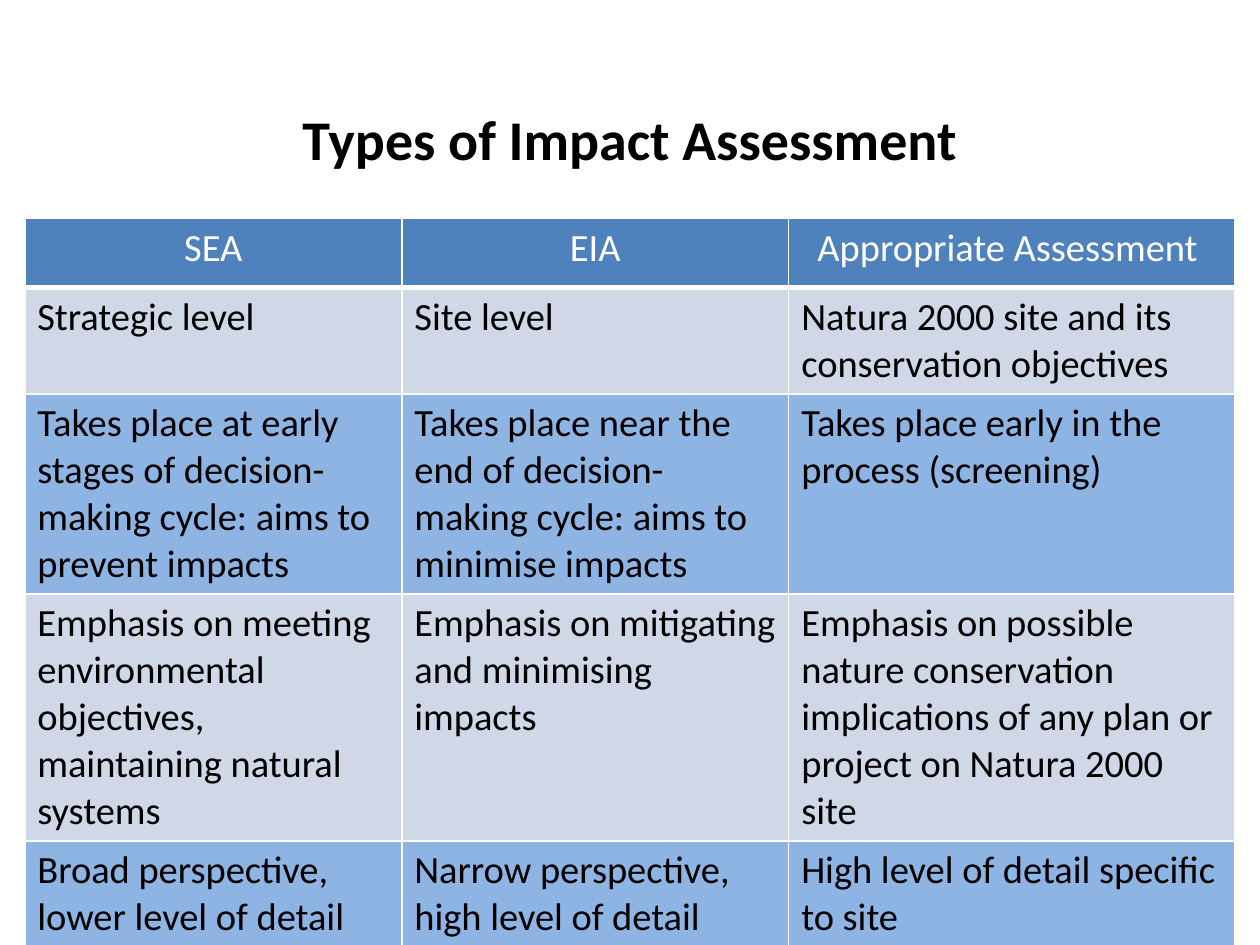
from lxml.etree import SubElement
from pptx import Presentation
from pptx.dml.color import RGBColor
from pptx.enum.text import MSO_ANCHOR, PP_ALIGN
from pptx.oxml.ns import qn
from pptx.util import Cm, Pt

BLACK = RGBColor(0x00, 0x00, 0x00)
WHITE = RGBColor(0xFF, 0xFF, 0xFF)
HEADER_BLUE = RGBColor(0x4F, 0x81, 0xBD)
PALE_BLUE = RGBColor(0xD0, 0xD8, 0xE8)
MID_BLUE = RGBColor(0x8E, 0xB4, 0xE3)

COLUMN_WIDTHS = [7.6, 7.8, 9.0]
ROW_HEIGHTS = [1.4, 2.1, 4.0, 4.95, 2.08]
ASSESSMENTS = [
    ["SEA", "EIA", "Appropriate Assessment "],
    ["Strategic level", "Site level", "Natura 2000 site and its conservation objectives"],
    [
        "Takes place at early stages of decision-making cycle: aims to prevent impacts",
        "Takes place near the end of decision-making cycle: aims to minimise impacts",
        "Takes place early in the process (screening)",
    ],
    [
        "Emphasis on meeting environmental objectives, maintaining natural systems",
        "Emphasis on mitigating and minimising impacts",
        "Emphasis on possible nature conservation implications of any plan or project on Natura 2000 site",
    ],
    [
        "Broad perspective, lower level of detail",
        "Narrow perspective, high level of detail",
        "High level of detail specific to site",
    ],
]


def write_text(frame, text, size=22, color=BLACK, bold=False, align=PP_ALIGN.LEFT):
    """Write one formatted paragraph into a text frame."""
    frame.word_wrap = True
    paragraph = frame.paragraphs[0]
    paragraph.alignment = align
    run = paragraph.add_run()
    run.text = text
    run.font.name = "Calibri"
    run.font.size = Pt(size)
    run.font.bold = bold
    run.font.color.rgb = color


def add_borders(cell, bottom=1):
    """Draw white borders of one point, with a chosen bottom width."""
    properties = cell._tc.get_or_add_tcPr()
    for side, width in (("L", 1), ("R", 1), ("T", 1), ("B", bottom)):
        line = SubElement(properties, qn(f"a:ln{side}"), w=str(Pt(width)))
        fill = SubElement(line, qn("a:solidFill"))
        SubElement(fill, qn("a:srgbClr"), val=str(WHITE))


def add_title(slide, left, top, width, height):
    """Place the centred slide title in its box."""
    shape = slide.shapes.add_textbox(left, top, width, height)
    shape.text_frame.vertical_anchor = MSO_ANCHOR.MIDDLE
    write_text(shape.text_frame, "Types of Impact Assessment", size=32, bold=True,
               align=PP_ALIGN.CENTER)


def add_comparison_table(slide, left, top, width, height):
    """Place the table that compares the assessment types."""
    table = slide.shapes.add_table(
        len(ROW_HEIGHTS), len(COLUMN_WIDTHS), left, top, width, height
    ).table
    for column, share in zip(table.columns, COLUMN_WIDTHS):
        column.width = int(width * share / sum(COLUMN_WIDTHS))
    for row, share in zip(table.rows, ROW_HEIGHTS):
        row.height = int(height * share / sum(ROW_HEIGHTS))
    for row_index, texts in enumerate(ASSESSMENTS):
        is_header = row_index == 0
        band = PALE_BLUE if row_index % 2 else MID_BLUE
        for column_index, text in enumerate(texts):
            cell = table.cell(row_index, column_index)
            add_borders(cell, bottom=3 if is_header else 1)
            cell.fill.solid()
            cell.fill.fore_color.rgb = HEADER_BLUE if is_header else band
            write_text(cell.text_frame, text, color=WHITE if is_header else BLACK,
                       align=PP_ALIGN.CENTER if is_header else PP_ALIGN.LEFT)


def main():
    """Build and save the presentation."""
    presentation = Presentation()
    presentation.slide_width = Cm(25.4)
    presentation.slide_height = Cm(19.05)
    slide = presentation.slides.add_slide(presentation.slide_layouts[6])
    add_comparison_table(slide, Cm(0.5), Cm(4.4), Cm(24.4), Cm(14.53))
    add_title(slide, Cm(1.27), Cm(1.8), Cm(22.86), Cm(1.98))
    presentation.save("out.pptx")


if __name__ == "__main__":
    main()
